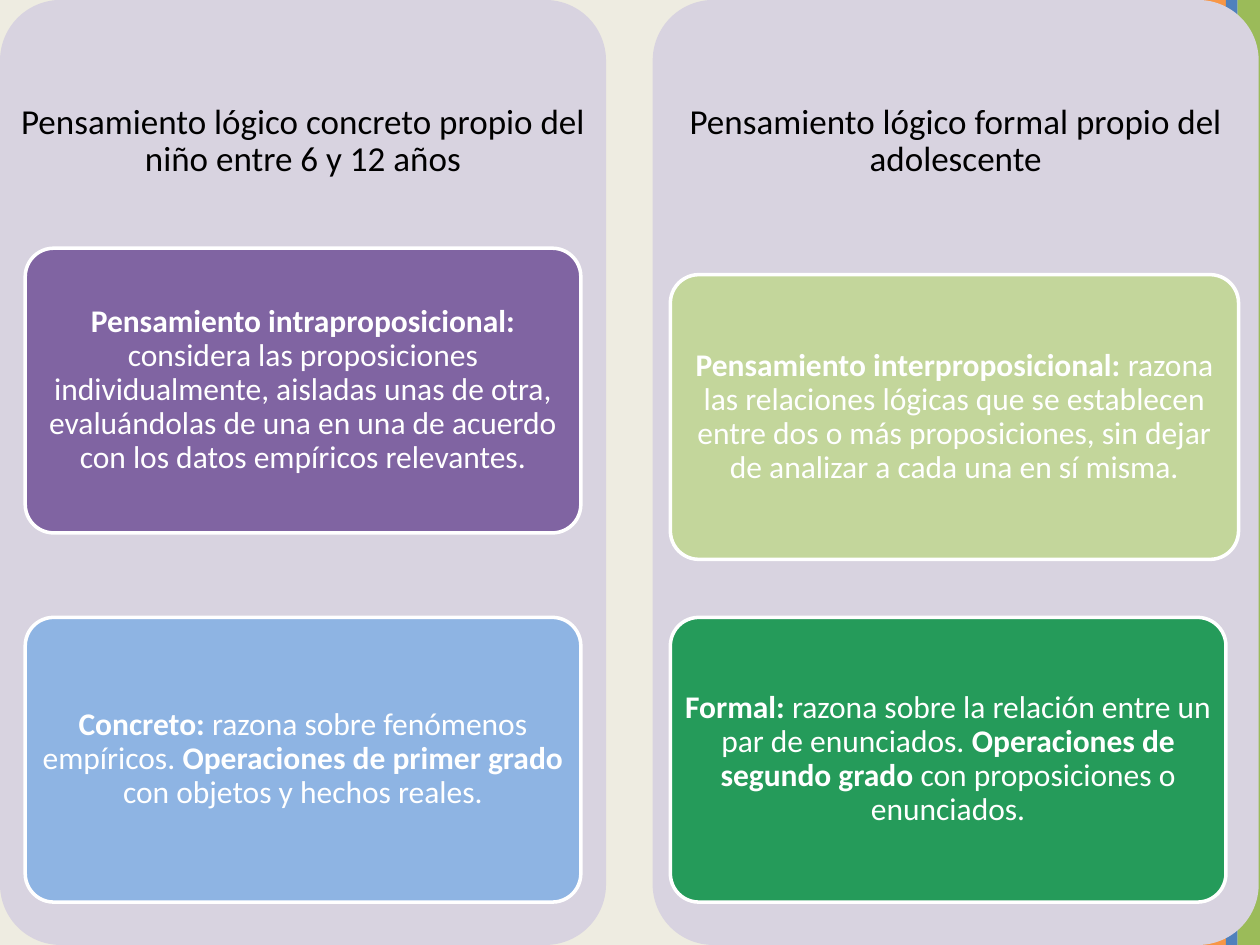
from dataclasses import dataclass
from typing import NamedTuple

from pptx import Presentation
from pptx.dml.color import RGBColor
from pptx.enum.shapes import MSO_SHAPE
from pptx.enum.text import MSO_ANCHOR, MSO_AUTO_SIZE, PP_ALIGN
from pptx.util import Inches, Pt

RECT = MSO_SHAPE.RECTANGLE
ROUND = MSO_SHAPE.ROUNDED_RECTANGLE
MIDDLE = MSO_ANCHOR.MIDDLE
CENTER = PP_ALIGN.CENTER
NO_FIT = MSO_AUTO_SIZE.NONE


@dataclass(frozen=True)
class Theme:
    font: str = "Calibri"
    back: str = "EEECE1"
    panel: str = "D8D3E0"
    dark: str = "000000"
    light: str = "FFFFFF"
    orange: str = "F79646"
    blue: str = "4F81BD"
    green: str = "9BBB59"
    purple: str = "8064A2"
    sky: str = "8EB4E3"
    lime: str = "C3D69B"
    leaf: str = "259B5A"
    head: int = 20
    text: int = 18
    edge: int = 2


class Box(NamedTuple):
    left: float
    top: float
    width: float
    height: float


class Run(NamedTuple):
    text: str
    bold: bool = False


class Card(NamedTuple):
    top: float
    width: float
    fill: str
    runs: list[Run]


class Column(NamedTuple):
    left: float
    inset: float
    slot: int
    title: str
    cards: list[Card]


THEME = Theme()
WIDTH, HEIGHT = 10, 7.5
PANEL_W, HEAD_H, CARD_H = 4.81, 2.25, 2.26
HEAD_PAD = (0.08, 0.08)
CARD_PAD = (0.05, 0.04)

# Side bands
BANDS = [
    (Box(9.38, 0, 0.35, HEIGHT), THEME.orange),
    (Box(9.82, 0, 0.18, HEIGHT), THEME.green),
    (Box(9.73, 0, 0.09, HEIGHT), THEME.blue),
]

# Compared kinds of thinking; slot is the heading's placeholder index
COLUMNS = [
    Column(0, 0.2, 1, "Pensamiento lógico concreto propio del niño entre 6 y 12 años", [
        Card(1.97, 4.41, THEME.purple, [
            Run("Pensamiento intraproposicional:", True),
            Run(" considera las proposiciones individualmente, aisladas unas de otra, "
                "evaluándolas de una en una de acuerdo con los datos empíricos relevantes."),
        ]),
        Card(4.9, 4.41, THEME.sky, [
            Run("Concreto:", True),
            Run(" razona sobre fenómenos empíricos. "),
            Run("Operaciones de primer grado", True),
            Run(" con objetos y hechos reales."),
        ]),
    ]),
    Column(5.18, 0.14, 3, "Pensamiento lógico formal propio del adolescente", [
        Card(2.18, 4.51, THEME.lime, [
            Run("Pensamiento interproposicional:", True),
            Run(" razona las relaciones lógicas que se establecen entre dos o más "
                "proposiciones, sin dejar de analizar a cada una en sí misma."),
        ]),
        Card(4.9, 4.41, THEME.leaf, [
            Run("Formal:", True),
            Run(" razona sobre la relación entre un par de enunciados. "),
            Run("Operaciones de segundo grado", True),
            Run(" con proposiciones o enunciados."),
        ]),
    ]),
]


def apply(item, values: dict) -> None:
    for name, value in values.items():
        setattr(item, name, value)


def add_box(slide, kind, box: Box, fill: str, edge: str | None = None):
    shape = slide.shapes.add_shape(kind, *map(Inches, box))
    shape.shadow.inherit = False
    shape.fill.solid()
    shape.fill.fore_color.rgb = RGBColor.from_string(fill)
    if kind == ROUND:
        shape.adjustments[0] = 0.1
    if edge:
        shape.line.color.rgb = RGBColor.from_string(edge)
        shape.line.width = Pt(THEME.edge)
    else:
        shape.line.fill.background()
    return shape


def write(shape, runs: list[Run], size: int, color: str, pad: tuple[float, float]) -> None:
    side, end = map(Inches, pad)
    frame = shape.text_frame
    apply(frame, {
        "word_wrap": True, "auto_size": NO_FIT, "vertical_anchor": MIDDLE,
        "margin_left": side, "margin_right": side,
        "margin_top": end, "margin_bottom": end,
    })
    para = frame.paragraphs[0]
    apply(para, {
        "alignment": CENTER, "line_spacing": 0.9,
        "space_before": Pt(0), "space_after": Pt(size * 0.35),
    })
    for part in runs:
        run = para.add_run()
        run.text = part.text
        apply(run.font, {"name": THEME.font, "size": Pt(size), "bold": part.bold})
        run.font.color.rgb = RGBColor.from_string(color)


def add_column(slide, col: Column, holder) -> None:
    add_box(slide, ROUND, Box(col.left, 0, PANEL_W, HEIGHT), THEME.panel)

    # Heading, raised above its panel
    slide.shapes._spTree.append(holder.element)
    apply(holder, {
        "left": Inches(col.left), "top": 0,
        "width": Inches(PANEL_W), "height": Inches(HEAD_H),
    })
    write(holder, [Run(col.title)], THEME.head, THEME.dark, HEAD_PAD)

    for card in col.cards:
        box = Box(col.left + col.inset, card.top, card.width, CARD_H)
        shape = add_box(slide, ROUND, box, card.fill, THEME.light)
        write(shape, card.runs, THEME.text, THEME.light, CARD_PAD)


def main() -> None:
    deck = Presentation()
    apply(deck, {"slide_width": Inches(WIDTH), "slide_height": Inches(HEIGHT)})
    slide = deck.slides.add_slide(deck.slide_layouts.get_by_name("Comparison"))
    slide.background.fill.solid()
    slide.background.fill.fore_color.rgb = RGBColor.from_string(THEME.back)

    # Keep only the two column headings
    slots = {item.placeholder_format.idx: item for item in slide.placeholders}
    used = {col.slot for col in COLUMNS}
    for index, item in slots.items():
        if index not in used:
            item.element.getparent().remove(item.element)

    for box, fill in BANDS:
        add_box(slide, RECT, box, fill)
    for col in COLUMNS:
        add_column(slide, col, slots[col.slot])
    deck.save("out.pptx")


if __name__ == "__main__":
    main()
